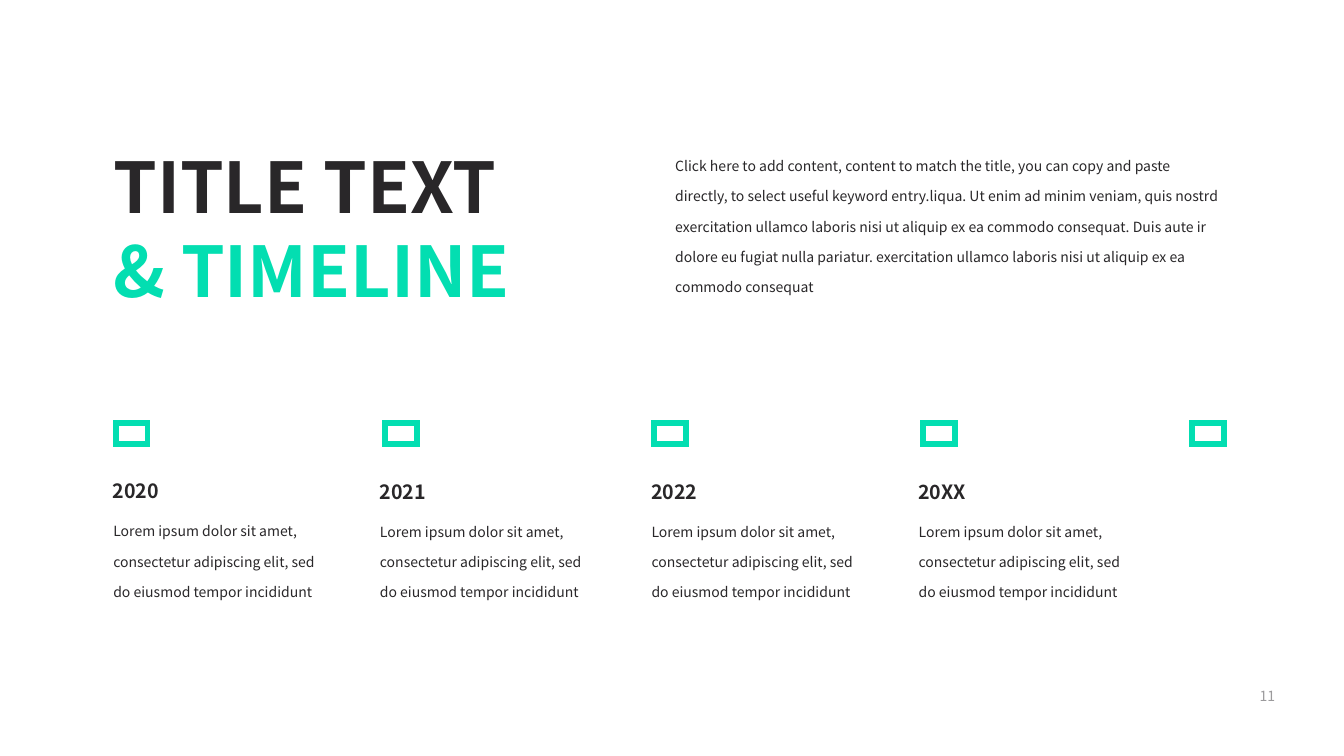
from lxml.etree import SubElement
from pptx import Presentation
from pptx.dml.color import RGBColor
from pptx.enum.shapes import MSO_SHAPE
from pptx.enum.text import MSO_ANCHOR, PP_ALIGN
from pptx.oxml.ns import qn
from pptx.util import Inches, Pt

COLORS = {"ink": "292729", "accent": "03DEB1", "paper": "FFFFFF", "muted": "9B9A9C"}
INTRO = (
    "Click here to add content, content to match the title, you can copy and paste directly, "
    "to select useful keyword entry.liqua. Ut enim ad minim veniam, quis nostrd exercitation "
    "ullamco laboris nisi ut aliquip ex ea commodo consequat. Duis aute ir dolore eu fugiat "
    "nulla pariatur. exercitation ullamco laboris nisi ut aliquip ex ea commodo consequat"
)
DETAIL = (
    "Lorem ipsum dolor sit amet, consectetur adipiscing elit, "
    "sed do eiusmod tempor incididunt"
)
MILESTONES = [
    ("2020", 2.15, 10.06, 4.21, 2.44),
    ("2021", 7.44, 10.07, 4.32, 1.83),
    ("2022", 12.83, 10.07, 4.32, 1.83),
    ("20XX", 18.13, 10.07, 4.32, 1.83),
]
MARKER_COUNT = 5
MARKER_LEFT = 2.3
MARKER_PITCH = 5.34


class TimelineSlide:
    """Holds the style and the current slide, and draws its elements."""

    font = "Noto Sans CJK SC"
    tight_inset = 0.04

    def __init__(self, presentation):
        self.slide = presentation.slides.add_slide(presentation.slide_layouts[5])

    def color(self, name):
        return RGBColor.from_string(COLORS[name])

    def set_frame(self, frame, tight, anchor):
        frame.word_wrap = True
        frame.vertical_anchor = anchor
        if tight:
            frame.margin_left = frame.margin_right = Inches(self.tight_inset)
            frame.margin_top = frame.margin_bottom = Inches(self.tight_inset)

    def styled_run(self, paragraph, text, size, color, bold=False, spacing=1.0,
                   align=PP_ALIGN.LEFT):
        paragraph.alignment = align
        paragraph.line_spacing = spacing
        run = paragraph.add_run()
        run.text = text
        run.font.name = self.font
        run.font.size = Pt(size)
        run.font.bold = bold
        run.font.color.rgb = self.color(color)
        properties = run._r.get_or_add_rPr()
        SubElement(properties, qn("a:ea")).set("typeface", self.font)

    def title(self, lines, left, top, width, height):
        shape = self.slide.shapes.title
        shape.left, shape.top = Inches(left), Inches(top)
        shape.width, shape.height = Inches(width), Inches(height)
        frame = shape.text_frame
        self.set_frame(frame, True, MSO_ANCHOR.MIDDLE)
        for index, (text, color) in enumerate(lines):
            paragraph = frame.add_paragraph() if index else frame.paragraphs[0]
            paragraph.space_before = Pt(0)
            self.styled_run(paragraph, text, 100, color, bold=True)

    def text(self, text, left, top, width, height, size=20, color="ink",
             tight=False, **style):
        shape = self.slide.shapes.add_textbox(
            Inches(left), Inches(top), Inches(width), Inches(height))
        self.set_frame(shape.text_frame, tight, MSO_ANCHOR.TOP)
        self.styled_run(shape.text_frame.paragraphs[0], text, size, color, **style)

    def marker(self, left, top):
        shape = self.slide.shapes.add_shape(
            MSO_SHAPE.RECTANGLE, Inches(left), Inches(top), Inches(0.63), Inches(0.42))
        shape.shadow.inherit = False
        shape.fill.solid()
        shape.fill.fore_color.rgb = self.color("paper")
        shape.line.color.rgb = self.color("accent")
        shape.line.width = Pt(8)
        outline = shape._element.spPr.find(qn("a:ln"))
        SubElement(outline, qn("a:miter")).set("lim", "800000")

    def milestone(self, year, left, top, width, height):
        self.text(year, left + 0.05, top - 0.59, 2.65, 0.55, size=28, tight=True, bold=True)
        self.text(DETAIL, left, top, width, height, spacing=1.8)


def main():
    presentation = Presentation()
    presentation.slide_width = Inches(26.67)
    presentation.slide_height = Inches(15)
    page = TimelineSlide(presentation)

    page.title([("TITLE TEXT", "ink"), ("& TIMELINE", "accent")], 2.21, 2.7, 10.65, 3.62)
    page.text(INTRO, 13.3, 2.81, 10.98, 3.05, spacing=1.8)
    for index in range(MARKER_COUNT):
        page.marker(MARKER_LEFT + index * MARKER_PITCH, 8.39)
    for milestone in MILESTONES:
        page.milestone(*milestone)
    page.text("11", 24.66, 13.61, 0.98, 0.42, color="muted", tight=True,
              align=PP_ALIGN.CENTER)

    presentation.save("out.pptx")


if __name__ == "__main__":
    main()
